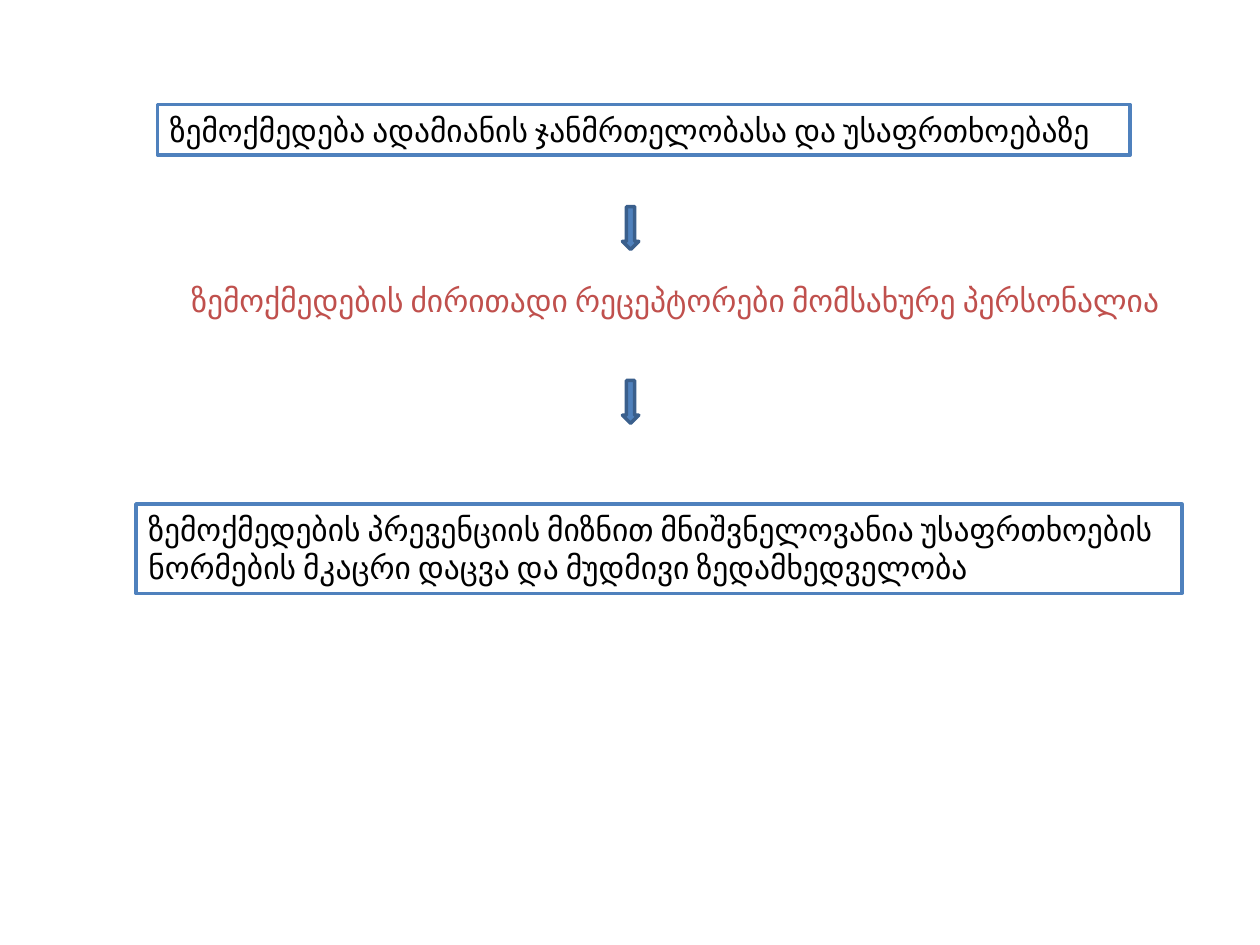
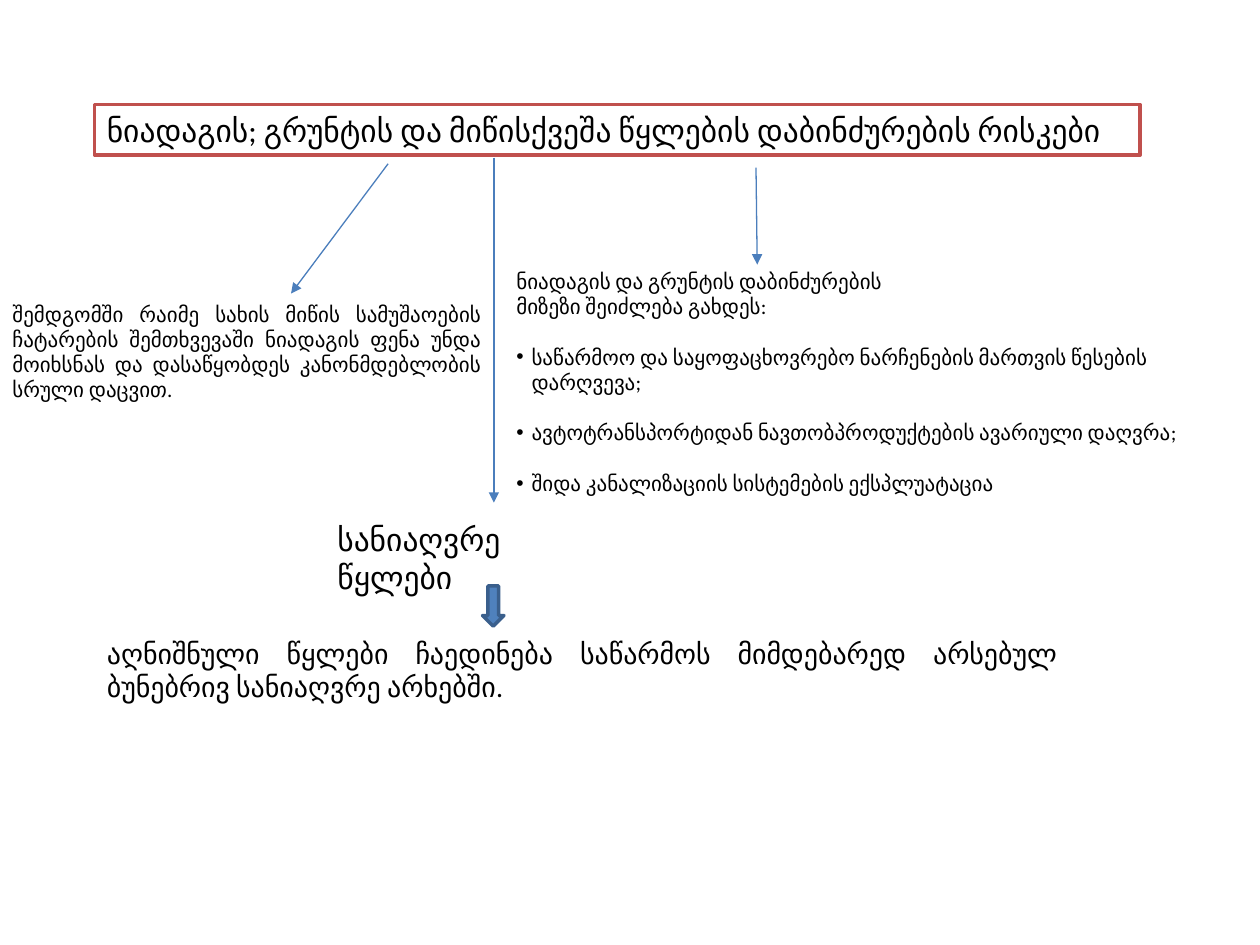
"""Build two flow slides on health, safety and soil pollution risks."""
from pptx import Presentation
from pptx.dml.color import RGBColor
from pptx.enum.shapes import MSO_CONNECTOR as CONN, MSO_SHAPE as SHAPE
from pptx.enum.text import MSO_ANCHOR as ANCHOR, MSO_AUTO_SIZE as AUTO, PP_ALIGN as ALIGN
from pptx.oxml.ns import qn
from pptx.util import Inches, Pt
from lxml import etree

FONT = "Calibri"
BLACK, WHITE, BLUE, RED = "000000", "FFFFFF", "4F81BD", "C0504D"
ARROW_EDGE, LINE = "3A5F8C", "4B7EBC"
BULLET_INDENT = 0.12

HEALTH = {
    "frames": [
        ((1.25, 0.83, 7.72, 0.4), BLUE, "ზემოქმედება ადამიანის ჯანმრთელობასა და უსაფრთხოებაზე"),
        ((1.08, 4, 8.3, 0.71), BLUE, "ზემოქმედების პრევენციის მიზნით მნიშვნელოვანია უსაფრთხოების "
                                     "ნორმების მკაცრი დაცვა და მუდმივი ზედამხედველობა"),
    ],
    "texts": [
        ((1.42, 2.18, 8.19, 0.4), 18, RED, ALIGN.LEFT,
         ["ზემოქმედების ძირითადი რეცეპტორები მომსახურე პერსონალია"], []),
    ],
    "lines": [],
    "block_arrows": [(4.94, 1.64, 0.13, 0.34), (4.94, 3.02, 0.13, 0.34)],
}

SOIL = {
    "frames": [
        ((0.75, 0.83, 8.3, 0.4), RED, "ნიადაგის; გრუნტის და მიწისქვეშა წყლების დაბინძურების რისკები"),
    ],
    "texts": [
        ((0, 2.34, 3.92, 0.91), 12, BLACK, ALIGN.JUSTIFY,
         ["შემდგომში რაიმე სახის მიწის სამუშაოების ჩატარების შემთხვევაში ნიადაგის ფენა უნდა "
          "მოიხსნას და დასაწყობდეს კანონმდებლობის სრული დაცვით."], []),
        ((4, 2.08, 5.75, 1.72), 12, BLACK, ALIGN.LEFT,
         ["ნიადაგის და გრუნტის დაბინძურების", "მიზეზი შეიძლება გახდეს:"],
         ["საწარმოო და საყოფაცხოვრებო ნარჩენების მართვის წესების დარღვევა;",
          "ავტოტრანსპორტიდან ნავთობპროდუქტების ავარიული დაღვრა;",
          "შიდა კანალიზაციის სისტემების ექსპლუატაცია"]),
        ((2.58, 4.08, 2.34, 0.4), 18, BLACK, ALIGN.LEFT, ["სანიაღვრე წყლები"], []),
        ((0.75, 5, 7.75, 0.64), 16, BLACK, ALIGN.JUSTIFY,
         ["აღნიშნული წყლები ჩაედინება საწარმოს მიმდებარედ არსებულ ბუნებრივ სანიაღვრე არხებში."], []),
    ],
    "lines": [(3.08, 1.3, 2.31, 2.33), (6, 1.33, 6.01, 2.1), (3.92, 1.25, 3.92, 3.99)],
    "block_arrows": [(3.83, 4.65, 0.17, 0.32)],
}


def rgb(color):
    return RGBColor.from_string(color)


def inches(values):
    return [Inches(v) for v in values]


def add_bullet(p):
    pPr = p._p.get_or_add_pPr()
    pPr.set("marL", str(Inches(BULLET_INDENT)))
    pPr.set("indent", str(-Inches(BULLET_INDENT)))
    etree.SubElement(pPr, qn("a:buFont"), typeface="Arial")
    etree.SubElement(pPr, qn("a:buChar"), char="•")


def write(sp, size, color, align, paragraphs, bullets=()):
    tf = sp.text_frame
    tf.word_wrap = True
    tf.auto_size = AUTO.SHAPE_TO_FIT_TEXT
    tf.vertical_anchor = ANCHOR.TOP
    for i, text in enumerate([*paragraphs, *bullets]):
        p = tf.add_paragraph() if i else tf.paragraphs[0]
        p.alignment = align
        if i >= len(paragraphs):
            p.space_before = Pt(14.5)
            add_bullet(p)
        r = p.add_run()
        r.text = text
        r.font.name, r.font.size = FONT, Pt(size)
        r.font.color.rgb = rgb(color)


def add_solid(s, kind, box, fill, edge):
    sp = s.shapes.add_shape(kind, *inches(box))
    sp.shadow.inherit = False
    sp.fill.solid()
    sp.fill.fore_color.rgb = rgb(fill)
    sp.line.color.rgb = rgb(edge)
    sp.line.width = Pt(2)
    return sp


def add_line_arrow(s, ends):
    line = s.shapes.add_connector(CONN.STRAIGHT, *inches(ends))
    line.line.color.rgb = rgb(LINE)
    line.line.width = Pt(0.75)
    etree.SubElement(line.line._get_or_add_ln(), qn("a:tailEnd"), type="triangle")
    etree.SubElement(line._element.spPr, qn("a:effectLst"))


def add_slide(prs, content):
    s = prs.slides.add_slide(prs.slide_layouts[6])
    for box, edge, text in content["frames"]:
        write(add_solid(s, SHAPE.RECTANGLE, box, WHITE, edge), 18, BLACK, ALIGN.LEFT, [text])
    for box, *style in content["texts"]:
        write(s.shapes.add_textbox(*inches(box)), *style)
    for ends in content["lines"]:
        add_line_arrow(s, ends)
    for box in content["block_arrows"]:
        add_solid(s, SHAPE.DOWN_ARROW, box, BLUE, ARROW_EDGE)


def main():
    prs = Presentation()
    prs.slide_width, prs.slide_height = Inches(10), Inches(7.5)
    for content in (HEALTH, SOIL):
        add_slide(prs, content)
    prs.save("out.pptx")


if __name__ == "__main__":
    main()
